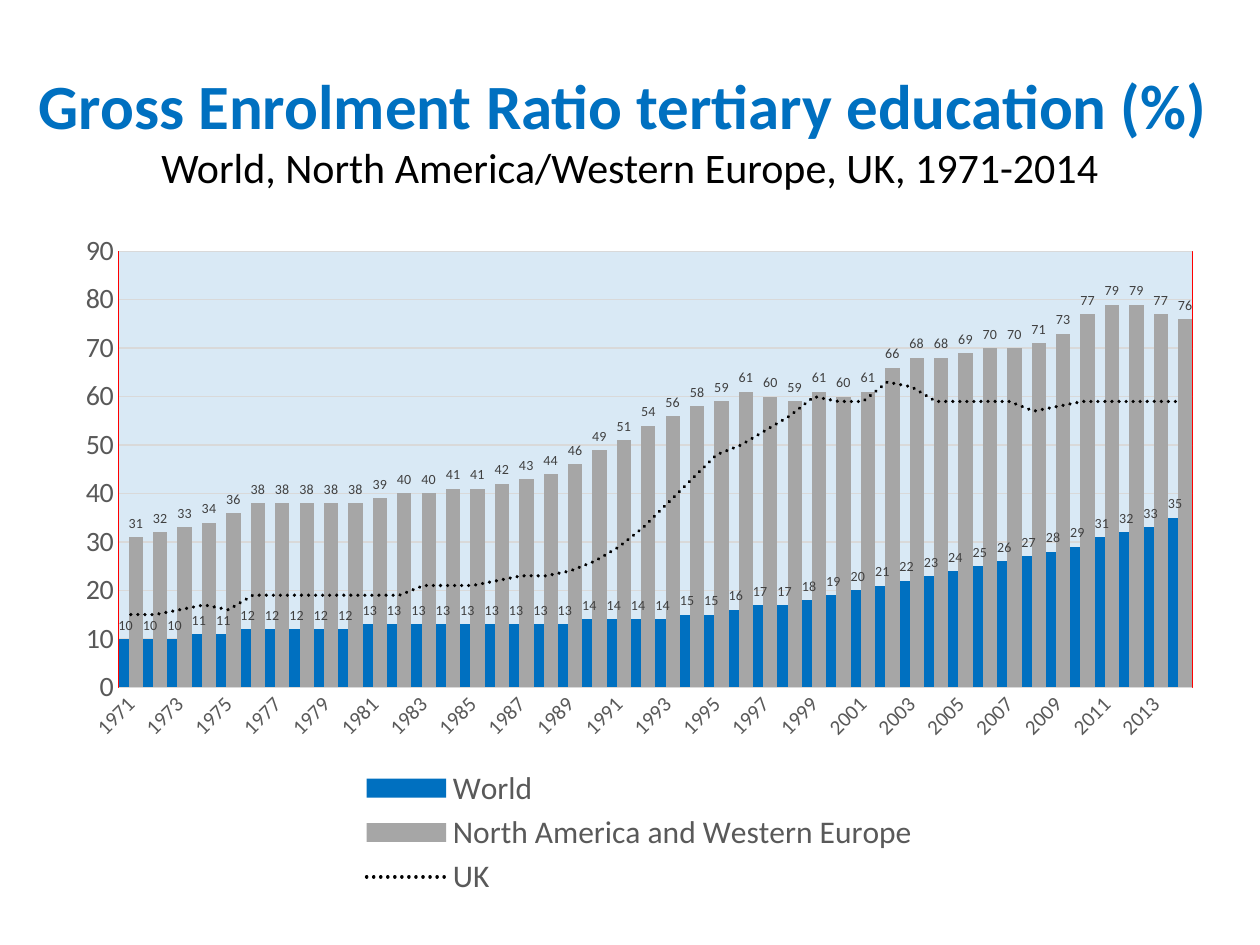
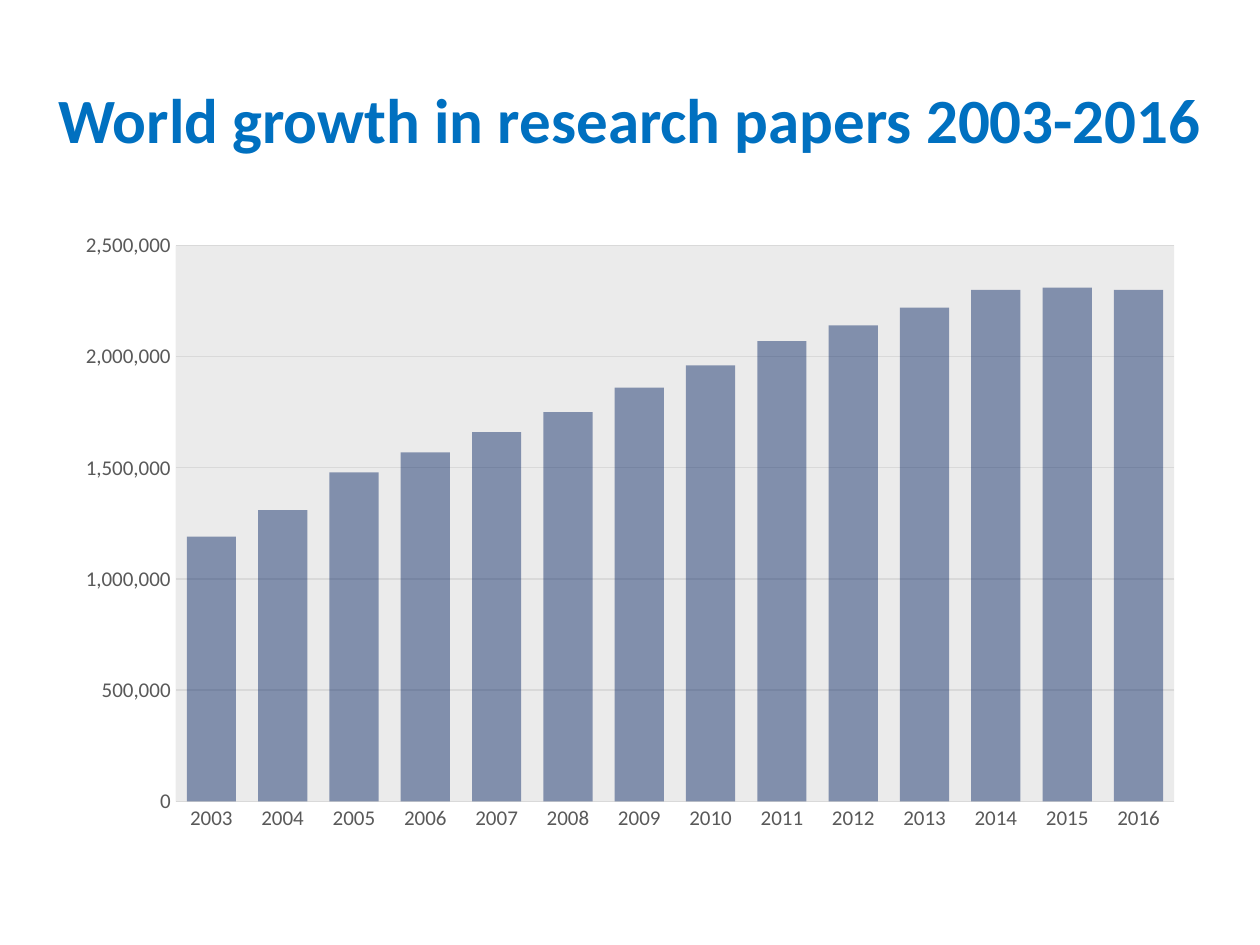
from lxml import etree
from pptx import Presentation
from pptx.chart.data import CategoryChartData
from pptx.dml.color import RGBColor
from pptx.enum.chart import XL_CHART_TYPE as ChartType
from pptx.enum.chart import XL_LABEL_POSITION as LabelPosition
from pptx.enum.chart import XL_LEGEND_POSITION as LegendPosition
from pptx.enum.chart import XL_MARKER_STYLE as Marker
from pptx.enum.chart import XL_TICK_MARK as TickMark
from pptx.enum.dml import MSO_LINE
from pptx.enum.text import MSO_ANCHOR, MSO_AUTO_SIZE, PP_ALIGN
from pptx.oxml import parse_xml
from pptx.oxml.ns import nsdecls, qn
from pptx.util import Pt

FONT = "Calibri"
COLORS = {
    "blue": "0070C0",
    "navy": "002060",
    "black": "000000",
    "bar_grey": "A6A6A6",
    "rule_grey": "D9D9D9",
    "axis_text": "595959",
    "label_text": "404040",
    "border_red": "FF0000",
}

ENROLMENT_YEARS = range(1971, 2015)
ENROLMENT = {
    "World": [
        10, 10, 10, 11, 11, 12, 12, 12, 12, 12, 13, 13, 13, 13, 13,
        13, 13, 13, 13, 14, 14, 14, 14, 15, 15, 16, 17, 17, 18, 19,
        20, 21, 22, 23, 24, 25, 26, 27, 28, 29, 31, 32, 33, 35],
    "North America and Western Europe": [
        31, 32, 33, 34, 36, 38, 38, 38, 38, 38, 39, 40, 40, 41, 41,
        42, 43, 44, 46, 49, 51, 54, 56, 58, 59, 61, 60, 59, 61, 60,
        61, 66, 68, 68, 69, 70, 70, 71, 73, 77, 79, 79, 77, 76],
    "UK": [
        15, 15, 16, 17, 16, 19, 19, 19, 19, 19, 19, 19, 21, 21, 21,
        22, 23, 23, 24, 26, 29, 33, 38, 43, 48, 50, 53, 56, 60, 59,
        59, 63, 62, 59, 59, 59, 59, 57, 58, 59, 59, 59, 59, 59],
}
PAPER_YEARS = range(2003, 2017)
PAPERS = {
    "Series 1": [
        1190000, 1310000, 1480000, 1570000, 1660000, 1750000, 1860000,
        1960000, 2070000, 2140000, 2220000, 2300000, 2310000, 2300000],
}


def rgb(name):
    return RGBColor.from_string(COLORS[name])


def style_font(font, size, color, bold=False):
    font.name = FONT
    font.size = Pt(size)
    font.bold = bold
    font.color.rgb = rgb(color)


def style_line(line, color, width):
    line.color.rgb = rgb(color)
    line.width = Pt(width)


def set_alpha(fill_parent, percent):
    """Make the first solid colour below the element partly transparent."""
    color = fill_parent.find(qn("a:solidFill")).find(qn("a:srgbClr"))
    etree.SubElement(color, qn("a:alpha"), val=str(percent * 1000))


def set_layout(part, position, part_box, chart_box, inner=False):
    """Fix the place of a chart part, in points from the chart's corner."""
    for old in part.findall(qn("c:layout")):
        part.remove(old)
    fractions = [length / whole for length, whole in zip(part_box, chart_box[2:] * 2)]
    target = '<c:layoutTarget val="inner"/>' if inner else ""
    modes = "".join(f'<c:{side}Mode val="edge"/>' for side in "xy")
    sizes = "".join(f'<c:{side} val="{value}"/>' for side, value in zip("xywh", fractions))
    part.insert(position, parse_xml(
        f'<c:layout {nsdecls("c")}><c:manualLayout>{target}{modes}{sizes}'
        "</c:manualLayout></c:layout>"))


def style_plot_area(chart, plot_box, chart_box, fill, alpha, border=None):
    plot_area = chart.plots[0]._element.getparent()
    set_layout(plot_area, 0, plot_box, chart_box, inner=True)
    line = (f'<a:solidFill><a:srgbClr val="{COLORS[border]}"/></a:solidFill>'
            if border else "<a:noFill/>")
    properties = parse_xml(
        f'<c:spPr {nsdecls("c", "a")}><a:solidFill><a:srgbClr val="{COLORS[fill]}"/>'
        f'</a:solidFill><a:ln w="{Pt(0.75)}">{line}</a:ln></c:spPr>')
    set_alpha(properties, alpha)
    plot_area.append(properties)


def style_axes(chart, maximum, step, value_size, number_format):
    years, values = chart.category_axis, chart.value_axis
    for axis, size in ((years, 12), (values, value_size)):
        axis.major_tick_mark = axis.minor_tick_mark = TickMark.NONE
        style_font(axis.tick_labels.font, size, "axis_text")
    style_line(years.format.line, "rule_grey", 0.75)
    values.format.line.fill.background()
    values.minimum_scale, values.maximum_scale, values.major_unit = 0, maximum, step
    values.has_major_gridlines = True
    style_line(values.major_gridlines.format.line, "rule_grey", 0.75)
    values.tick_labels.number_format = number_format
    values.tick_labels.number_format_is_linked = False


def add_title(slide, box, text):
    """Place a title; a second line, if any, becomes the plain subtitle."""
    title = slide.shapes.title
    title.left, title.top, title.width, title.height = map(Pt, box)
    frame = title.text_frame
    frame.text = text
    frame.word_wrap = True
    frame.auto_size = MSO_AUTO_SIZE.NONE
    frame.vertical_anchor = MSO_ANCHOR.MIDDLE
    paragraph = frame.paragraphs[0]
    paragraph.alignment = PP_ALIGN.CENTER
    heading, *subtitles = paragraph.runs
    style_font(heading.font, 36, "blue", bold=True)
    for subtitle in subtitles:
        style_font(subtitle.font, 24, "black")


def add_columns(slide, box, years, series, gap, overlap):
    data = CategoryChartData()
    data.categories = [str(year) for year in years]
    for name, values in series.items():
        data.add_series(name, values)
    chart = slide.shapes.add_chart(ChartType.COLUMN_CLUSTERED, *map(Pt, box), data).chart
    chart.has_title = False
    chart.has_legend = False
    style_font(chart.font, 10, "black")
    columns = chart.plots[0]
    columns.gap_width, columns.overlap = gap, overlap
    columns.vary_by_categories = False
    return chart


def turn_last_series_into_line(chart):
    columns = chart.plots[0]._element
    series = columns.findall(qn("c:ser"))[-1]
    for invert in series.findall(qn("c:invertIfNegative")):
        series.remove(invert)
    line_chart = parse_xml(
        f'<c:lineChart {nsdecls("c")}><c:grouping val="standard"/>'
        '<c:varyColors val="0"/><c:marker val="1"/></c:lineChart>')
    line_chart.insert(2, series)
    for axis_id in columns.findall(qn("c:axId")):
        etree.SubElement(line_chart, qn("c:axId"), val=axis_id.get("val"))
    columns.addnext(line_chart)


def slant_every_second_year(axis):
    element = axis._element
    element.find(qn("c:txPr")).find(qn("a:bodyPr")).set("rot", "-2700000")
    skip = parse_xml(f'<c:tickLblSkip {nsdecls("c")} val="2"/>')
    element.find(qn("c:noMultiLvlLbl")).addprevious(skip)


def style_enrolment_columns(columns):
    for region, color in zip(columns.series, ("blue", "bar_grey")):
        region.format.fill.solid()
        region.format.fill.fore_color.rgb = rgb(color)
        labels = region.data_labels
        labels.show_value = True
        labels.position = LabelPosition.OUTSIDE_END
        labels.number_format = "#,##0"
        labels.number_format_is_linked = False
        style_font(labels.font, 8, "label_text")


def style_uk_line(uk):
    uk.smooth = False
    uk.marker.style = Marker.NONE
    style_line(uk.format.line, "black", 2)
    uk.format.line.dash_style = MSO_LINE.ROUND_DOT
    uk._element.find(qn("c:spPr")).find(qn("a:ln")).set("cap", "rnd")


def add_enrolment_legend(chart, chart_box):
    chart.has_legend = True
    legend = chart.legend
    legend.position = LegendPosition.BOTTOM
    legend.include_in_layout = False
    style_font(legend.font, 18, "axis_text")
    set_layout(legend._element, 1, (167.9, 310, 322.8, 79.5), chart_box)


def add_enrolment_chart(slide, box):
    chart = add_columns(slide, box, ENROLMENT_YEARS, ENROLMENT, gap=0, overlap=30)
    turn_last_series_into_line(chart)
    columns, lines = chart.plots
    style_enrolment_columns(columns)
    style_uk_line(lines.series[0])
    style_axes(chart, 90, 10, 16, "General")
    slant_every_second_year(chart.category_axis)
    style_plot_area(chart, (31.8, 17.6, 613.6, 249.2), box, "blue", 15, "border_red")
    add_enrolment_legend(chart, box)


def add_papers_chart(slide, box):
    chart = add_columns(slide, box, PAPER_YEARS, PAPERS, gap=45, overlap=21)
    papers = chart.plots[0].series[0]
    papers.format.fill.solid()
    papers.format.fill.fore_color.rgb = rgb("navy")
    set_alpha(papers._element.find(qn("c:spPr")), 45)
    style_axes(chart, 2500000, 500000, 12, "#,##0")
    style_plot_area(chart, (64.4, 14.3, 570.6, 317.7), box, "rule_grey", 50)


def main():
    deck = Presentation()
    deck.slide_width, deck.slide_height = Pt(720), Pt(540)
    title_only = deck.slide_layouts[5]

    enrolment = deck.slides.add_slide(title_only)
    add_title(enrolment, (0, 21.6, 720, 104.4),
              "Gross Enrolment Ratio tertiary education (%) \v"
              "World, North America/Western Europe, UK, 1971-2014")
    add_enrolment_chart(enrolment, (36, 126, 658.8, 389.5))

    papers = deck.slides.add_slide(title_only)
    add_title(papers, (22, 22.7, 676, 90), "World growth in research papers 2003-2016")
    add_papers_chart(papers, (36, 126, 648, 356.4))

    deck.save("out.pptx")


if __name__ == "__main__":
    main()
